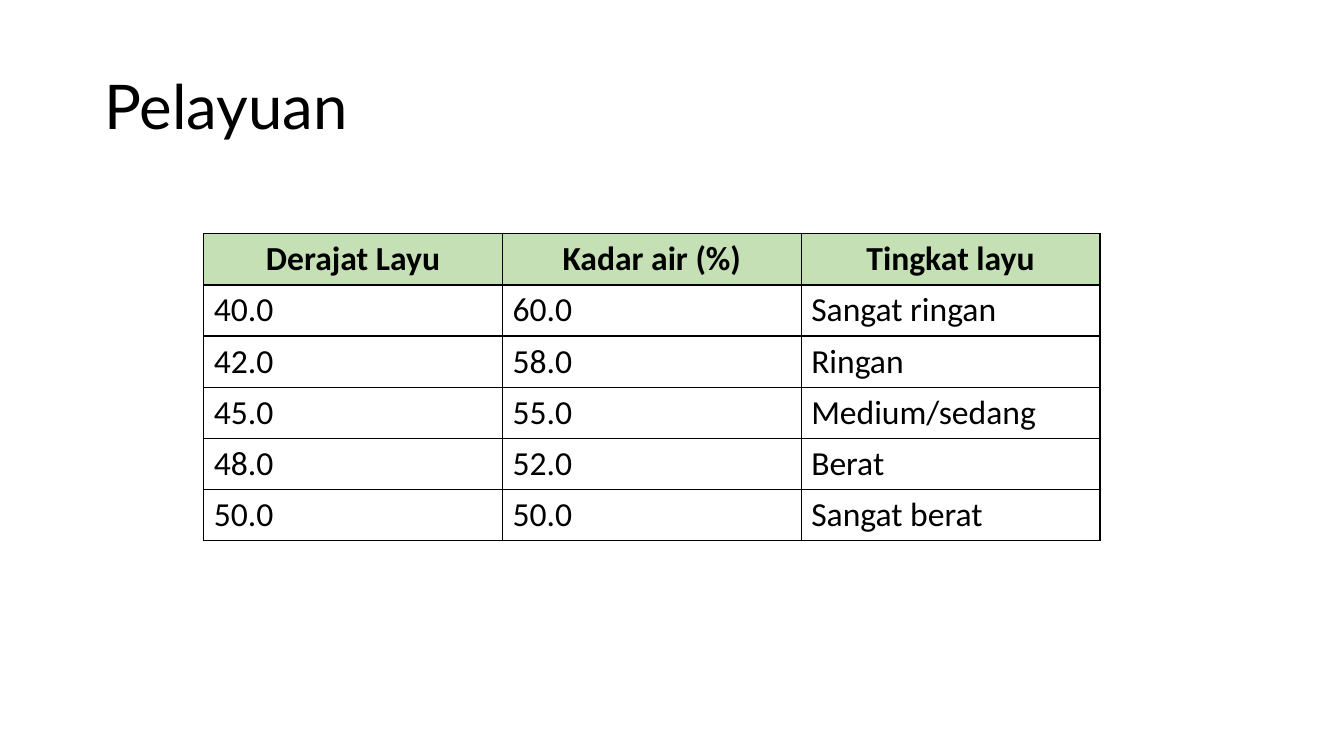
from lxml.etree import SubElement
from pptx import Presentation
from pptx.dml.color import RGBColor
from pptx.enum.text import MSO_VERTICAL_ANCHOR as Anchor, PP_PARAGRAPH_ALIGNMENT as Align
from pptx.oxml.ns import qn
from pptx.util import Inches, Pt

COLOURS = {"text": "000000", "header": "C5E0B4", "border": "000000"}
FORMATS = {
    "title": {"name": "Lato", "size": Pt(44), "bold": False},
    "header": {"name": "Calibri", "size": Pt(24), "bold": True},
    "body": {"name": "Calibri", "size": Pt(24), "bold": False},
}
WITHERING_LEVELS = [
    ("Derajat Layu", "Kadar air (%)", "Tingkat layu"),
    ("40.0", "60.0", "Sangat ringan"),
    ("42.0", "58.0", "Ringan"),
    ("45.0", "55.0", "Medium/sedang"),
    ("48.0", "52.0", "Berat"),
    ("50.0", "50.0", "Sangat berat"),
]


class SlideBuilder:
    """Holds the style and the current slide; lengths are shares of the slide."""

    def __init__(self, presentation):
        self.width = presentation.slide_width
        self.height = presentation.slide_height
        self.slide = presentation.slides.add_slide(presentation.slide_layouts[5])

    def area(self, left, top, width, height):
        return (int(left * self.width), int(top * self.height),
                int(width * self.width), int(height * self.height))

    def add_text(self, paragraph, text, style, alignment):
        paragraph.alignment = alignment
        run = paragraph.add_run()
        run.text = text
        for attribute, value in FORMATS[style].items():
            setattr(run.font, attribute, value)
        run.font.color.rgb = RGBColor.from_string(COLOURS["text"])

    def title(self, text, *shares):
        shape = self.slide.shapes.title
        shape.left, shape.top, shape.width, shape.height = self.area(*shares)
        shape.text_frame.vertical_anchor = Anchor.MIDDLE
        paragraph = shape.text_frame.paragraphs[0]
        paragraph.line_spacing = 0.9
        self.add_text(paragraph, text, "title", Align.LEFT)

    def border(self, cell):
        properties = cell._tc.get_or_add_tcPr()
        for side in ("a:lnL", "a:lnR", "a:lnT", "a:lnB"):
            line = SubElement(properties, qn(side), w=str(Pt(1)))
            fill = SubElement(line, qn("a:solidFill"))
            SubElement(fill, qn("a:srgbClr"), val=COLOURS["border"])

    def table(self, rows, *shares):
        table = self.slide.shapes.add_table(len(rows), len(rows[0]), *self.area(*shares)).table
        table.horz_banding = False
        for row_index, row in enumerate(rows):
            is_header = row_index == 0
            for column_index, text in enumerate(row):
                cell = table.cell(row_index, column_index)
                self.border(cell)
                if is_header:
                    cell.fill.solid()
                    cell.fill.fore_color.rgb = RGBColor.from_string(COLOURS["header"])
                else:
                    cell.fill.background()
                self.add_text(cell.text_frame.paragraphs[0], text,
                              "header" if is_header else "body",
                              Align.CENTER if is_header else Align.LEFT)


def main():
    presentation = Presentation()
    presentation.slide_width, presentation.slide_height = Inches(13.33), Inches(7.5)
    builder = SlideBuilder(presentation)

    # Heading
    builder.title("Pelayuan", 0.07, 0.05, 0.86, 0.19)

    # Withering degree, water content and level
    builder.table(WITHERING_LEVELS, 2.02 / 13.33, 2.32 / 7.5, 8.89 / 13.33, 3 / 7.5)

    presentation.save("out.pptx")


if __name__ == "__main__":
    main()
